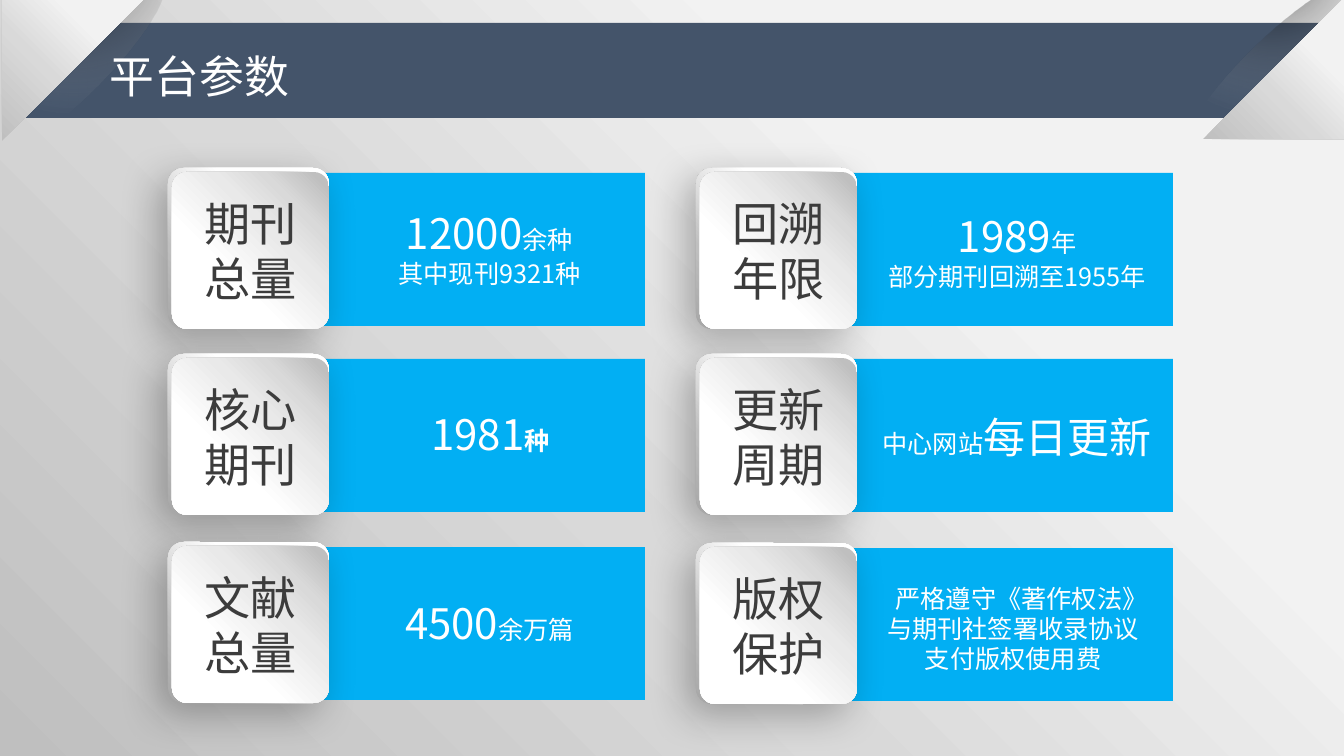
"""Build the platform parameters slide with six labelled cards."""
from dataclasses import dataclass

from pptx import Presentation
from pptx.dml.color import RGBColor
from pptx.enum.shapes import MSO_SHAPE
from pptx.enum.text import MSO_ANCHOR, MSO_AUTO_SIZE, PP_ALIGN
from pptx.oxml import parse_xml
from pptx.oxml.ns import nsdecls, qn
from pptx.util import Emu, Pt

RECTANGLE = MSO_SHAPE.RECTANGLE
ROUNDED = MSO_SHAPE.ROUNDED_RECTANGLE
OVAL = MSO_SHAPE.OVAL
TRIANGLE = MSO_SHAPE.RIGHT_TRIANGLE
LEFT, CENTER = PP_ALIGN.LEFT, PP_ALIGN.CENTER
MIDDLE = MSO_ANCHOR.MIDDLE
GROW = MSO_AUTO_SIZE.SHAPE_TO_FIT_TEXT

EMU_PER_PX = 914400 / 100.8
FONT = "Noto Sans CJK SC"
BIG, SMALL = 30, 18
COLORS = {"bar": "44546A", "panel": "02AFF3", "label": "3C3C3C",
          "white": "FFFFFF", "shadow": "000000"}


@dataclass(frozen=True)
class Box:
    left: int
    top: int
    width: int
    height: int


@dataclass(frozen=True)
class Gradient:
    stops: tuple
    focus: tuple


@dataclass(frozen=True)
class Run:
    text: str
    size: int = SMALL
    bold: bool = False


@dataclass(frozen=True)
class Corner:
    shade: Box
    shade_rotation: float
    triangle: Box
    triangle_rotation: int


@dataclass(frozen=True)
class Parameter:
    label: str
    left: int
    top: int
    text_box: Box
    lines: tuple
    first_indent: int = 0


TOP_RIGHT, BOTTOM_LEFT = (100, 0, 0, 100), (0, 100, 100, 0)
BACKDROP = Gradient(((9, "F2F2F2", 100), (29, "F2F2F2", 100),
                     (59, "D9D9D9", 100), (100, "BFBFBF", 100)), TOP_RIGHT)
SHADE = Gradient(((0, "404040", 40), (32, "000000", 30),
                  (100, "E7E6E6", 0)), (50, -80, 50, 180))
CARD_EDGE = Gradient(((0, "FFFFFF", 100), (35, "FFFFFF", 100),
                      (74, "BFBFBF", 100), (100, "A6A6A6", 100)), TOP_RIGHT)
CARD_FACE = Gradient(((0, "FFFFFF", 100), (35, "FFFFFF", 100), (63, "E9E9E9", 100),
                      (79, "D9D9D9", 100), (95, "BFBFBF", 100)), BOTTOM_LEFT)

CORNERS = (
    Corner(Box(-51, 39, 249, 59), 315.5, Box(2, 0, 141, 141), 90),
    Corner(Box(1148, 41, 249, 59), 135.5, Box(1203, -2, 141, 141), 270),
)
PARAMETERS = (
    Parameter("期刊总量", 168, 168, Box(365, 203, 249, 92),
              ((Run("12000", BIG), Run("余种")), (Run("其中现刊9321种"),))),
    Parameter("核心期刊", 168, 354, Box(366, 404, 249, 61),
              ((Run("1981", BIG), Run("种", bold=True)),)),
    Parameter("文献总量", 168, 542, Box(365, 593, 249, 61),
              ((Run("4500", BIG), Run("余万篇")),)),
    Parameter("回溯年限", 696, 168, Box(864, 206, 306, 92),
              ((Run("1989", BIG), Run("年")), (Run("部分期刊回溯至1955年"),))),
    Parameter("更新周期", 696, 354, Box(864, 407, 306, 61),
              ((Run("中心网站"), Run("每日更新", BIG)),)),
    Parameter("版权保护", 696, 543, Box(860, 578, 306, 102),
              ((Run("严格遵守《著作权法》"),), (Run("与期刊社签署收录协议"),),
               (Run("支付版权使用费"),)), first_indent=12),
)


def px(value: int) -> Emu:
    return Emu(round(value * EMU_PER_PX))


def place(box: Box) -> tuple:
    return px(box.left), px(box.top), px(box.width), px(box.height)


def apply_gradient(fill, element, gradient: Gradient) -> None:
    fill.gradient()
    stops = "".join(
        f'<a:gs pos="{position * 1000}"><a:srgbClr val="{color}">'
        f'<a:alpha val="{opacity * 1000}"/></a:srgbClr></a:gs>'
        for position, color, opacity in gradient.stops)
    left, top, right, bottom = (side * 1000 for side in gradient.focus)
    old = element.find(".//" + qn("a:gradFill"))
    old.getparent().replace(old, parse_xml(
        f'<a:gradFill {nsdecls("a")} rotWithShape="1"><a:gsLst>{stops}</a:gsLst>'
        f'<a:path path="circle"><a:fillToRect l="{left}" t="{top}" r="{right}" '
        f'b="{bottom}"/></a:path></a:gradFill>'))


def add_shape(shapes, kind, box: Box, fill: str | Gradient, rotation: float = 0):
    shape = shapes.add_shape(kind, *place(box))
    shape.rotation = rotation
    if isinstance(fill, Gradient):
        apply_gradient(shape.fill, shape._element.spPr, fill)
    else:
        shape.fill.solid()
        shape.fill.fore_color.rgb = RGBColor.from_string(fill)
    shape.line.fill.background()
    shape.shadow.inherit = False
    if kind == ROUNDED:
        shape.adjustments[0] = 0.097
    return shape


def add_card_shadow(shape) -> None:
    shape._element.spPr.find(qn("a:effectLst")).append(parse_xml(
        f'<a:outerShdw {nsdecls("a")} blurRad="{Pt(29)}" dist="{Pt(11)}" '
        f'dir="{133 * 60000}" algn="tr" rotWithShape="0">'
        f'<a:srgbClr val="{COLORS["shadow"]}"><a:alpha val="27000"/></a:srgbClr>'
        '</a:outerShdw>'))


def write_text(shape, lines: tuple, *, color: str = COLORS["white"],
               align=CENTER, wrap: bool = True, first_indent: int = 0) -> None:
    frame = shape.text_frame
    frame.word_wrap = wrap
    for index, line in enumerate(lines):
        paragraph = frame.add_paragraph() if index else frame.paragraphs[0]
        paragraph.alignment = align
        if first_indent and not index:
            paragraph._p.get_or_add_pPr().set("marL", str(Pt(first_indent)))
        for item in line:
            run = paragraph.add_run()
            run.text = item.text
            run.font.size = Pt(item.size)
            run.font.bold = item.bold
            run.font.name = FONT
            run.font.color.rgb = RGBColor.from_string(color)
            run._r.get_or_add_rPr().append(
                parse_xml(f'<a:ea {nsdecls("a")} typeface="{FONT}"/>'))


def add_text(shapes, box: Box, lines: tuple, **text_format) -> None:
    text_box = shapes.add_textbox(*place(box))
    write_text(text_box, lines, **text_format)
    text_box.text_frame.auto_size = GROW


def add_corner(slide, corner: Corner) -> None:
    shapes = slide.shapes.add_group_shape().shapes
    add_shape(shapes, OVAL, corner.shade, SHADE, corner.shade_rotation)
    add_shape(shapes, TRIANGLE, corner.triangle, BACKDROP, corner.triangle_rotation)


def add_parameter(slide, parameter: Parameter) -> None:
    shapes = slide.shapes.add_group_shape().shapes
    left, top = parameter.left, parameter.top
    add_shape(shapes, RECTANGLE, Box(left + 155, top + 5, 322, 153), COLORS["panel"])
    add_card_shadow(add_shape(shapes, ROUNDED, Box(left, top, 161, 161), CARD_EDGE))
    face = add_shape(shapes, ROUNDED, Box(left + 4, top + 4, 157, 157), CARD_FACE)
    face.text_frame.vertical_anchor = MIDDLE
    write_text(face, ((Run(parameter.label, 33),),), color=COLORS["label"])
    add_text(shapes, parameter.text_box, parameter.lines,
             first_indent=parameter.first_indent)


def main() -> None:
    presentation = Presentation()
    presentation.slide_width, presentation.slide_height = px(1344), px(756)
    slide = presentation.slides.add_slide(presentation.slide_layouts[6])
    apply_gradient(slide.background.fill, slide._element, BACKDROP)
    add_shape(slide.shapes, RECTANGLE, Box(26, 23, 1318, 95), COLORS["bar"])
    left_corner, right_corner = CORNERS
    add_corner(slide, left_corner)
    add_text(slide.shapes, Box(100, 44, 202, 65), ((Run("平台参数", 32),),),
             align=LEFT, wrap=False)
    add_corner(slide, right_corner)
    for parameter in PARAMETERS:
        add_parameter(slide, parameter)
    presentation.save("out.pptx")


if __name__ == "__main__":
    main()
